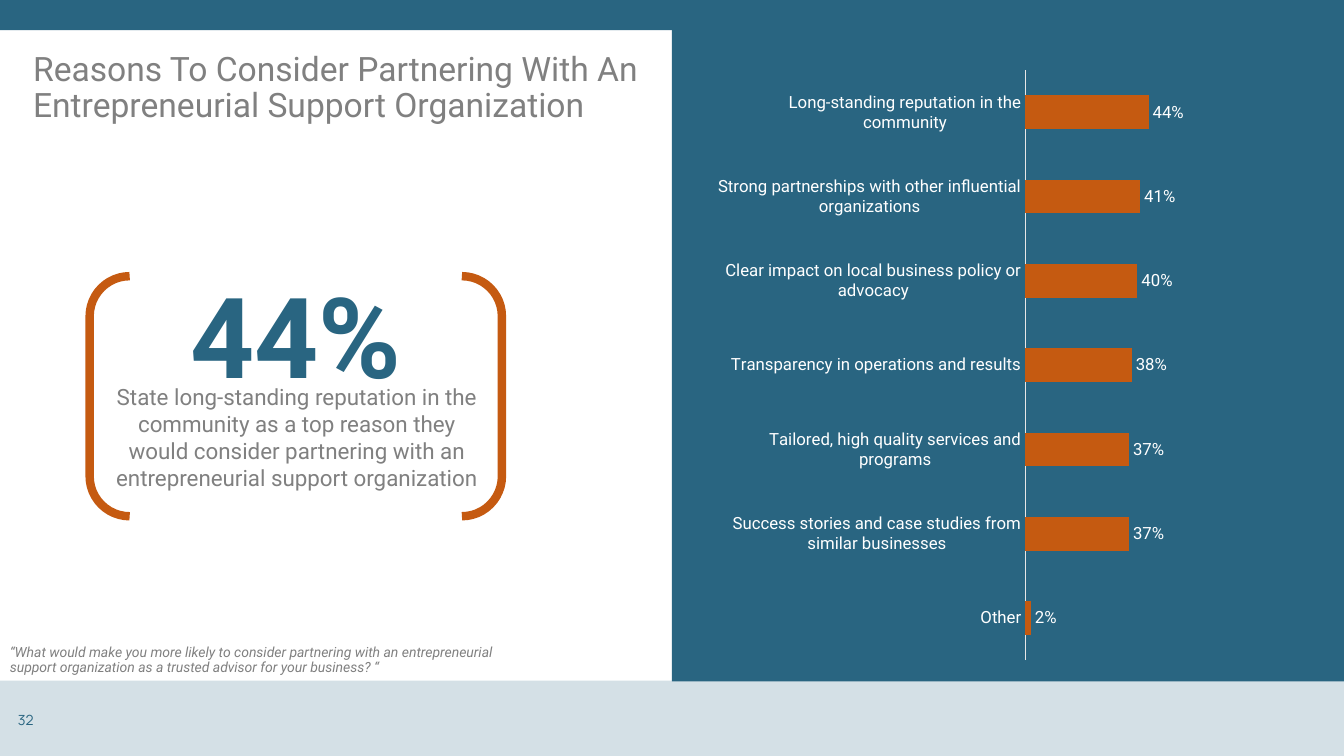
"""Build a slide on reasons to partner with a support organization."""
import pptx
import pptx.chart.data
import pptx.dml.color
import pptx.enum.chart
import pptx.enum.shapes
import pptx.enum.text
import pptx.oxml
import pptx.oxml.ns
import pptx.util

Cm = pptx.util.Cm
Pt = pptx.util.Pt
RGBColor = pptx.dml.color.RGBColor
SHAPE = pptx.enum.shapes.MSO_SHAPE
ALIGN = pptx.enum.text.PP_ALIGN
ANCHOR = pptx.enum.text.MSO_ANCHOR

BLUE = RGBColor(0x29, 0x65, 0x81)
PALE = RGBColor(0xD4, 0xE0, 0xE6)
GREY = RGBColor(0x80, 0x80, 0x80)
RUST = RGBColor(0xC5, 0x5A, 0x11)
WHITE = RGBColor(0xFF, 0xFF, 0xFF)
SILVER = RGBColor(0xE7, 0xE6, 0xE6)

WIDTH, HEIGHT = 33.87, 19.05
HALF = WIDTH / 2
FONT = "Roboto"

REASONS = [
    ("Other", 0.02),
    ("Success stories and case studies from similar businesses", 0.37),
    ("Tailored, high quality services and programs", 0.37),
    ("Transparency in operations and results", 0.38),
    ("Clear impact on local business policy or advocacy", 0.40),
    ("Strong partnerships with other influential organizations", 0.41),
    ("Long-standing reputation in the community", 0.44),
]


def place(box):
    """Turn left, top, width and height in centimetres into lengths."""
    return [Cm(side) for side in box]


def add_panel(slide, box, color):
    """Add a plain filled rectangle."""
    panel = slide.shapes.add_shape(SHAPE.RECTANGLE, *place(box))
    panel.shadow.inherit = False
    panel.fill.solid()
    panel.fill.fore_color.rgb = color
    panel.line.fill.background()


def add_bracket(slide, box):
    """Add the pair of brackets around the key figure."""
    pair = slide.shapes.add_shape(SHAPE.DOUBLE_BRACKET, *place(box))
    pair.shadow.inherit = False
    pair.fill.background()
    pair.line.color.rgb = RUST
    pair.line.width = Pt(6)


def set_text(shape, text, size, color=GREY, name=FONT, bold=False,
             italic=False, align=ALIGN.LEFT, anchor=ANCHOR.TOP, spacing=1.0):
    """Fill a shape with one formatted paragraph."""
    frame = shape.text_frame
    frame.text = text
    frame.word_wrap = True
    frame.auto_size = pptx.enum.text.MSO_AUTO_SIZE.NONE
    frame.vertical_anchor = anchor
    para = frame.paragraphs[0]
    para.alignment = align
    para.line_spacing = spacing
    font = para.runs[0].font
    font.name = name
    font.size = Pt(size)
    font.bold = bold
    font.italic = italic
    font.color.rgb = color


def add_text(slide, box, text, size, **style):
    """Add a text box with one formatted paragraph."""
    set_text(slide.shapes.add_textbox(*place(box)), text, size, **style)


def set_title(slide, box, text):
    """Move the title placeholder and fill it."""
    title = slide.shapes.title
    title.left, title.top, title.width, title.height = place(box)
    set_text(title, text, 24, spacing=0.9)


def set_plot(chart, x, y, w, h):
    """Fix the inner plot area as fractions of the chart."""
    area = chart._chartSpace.chart.plotArea
    for old in area.findall(pptx.oxml.ns.qn("c:layout")):
        area.remove(old)
    sides = "".join(f'<c:{key} val="{val}"/>' for key, val in
                    (("x", x), ("y", y), ("w", w), ("h", h)))
    area.insert(0, pptx.oxml.parse_xml(
        f'<c:layout {pptx.oxml.ns.nsdecls("c")}><c:manualLayout>'
        '<c:layoutTarget val="inner"/><c:xMode val="edge"/>'
        f'<c:yMode val="edge"/>{sides}</c:manualLayout></c:layout>'))


def add_bars(slide, box):
    """Add the bar chart of reasons."""
    data = pptx.chart.data.CategoryChartData(number_format="0%")
    data.categories = [reason for reason, _ in REASONS]
    data.add_series("Series 1", [share for _, share in REASONS])
    kind = pptx.enum.chart.XL_CHART_TYPE.BAR_CLUSTERED
    chart = slide.shapes.add_chart(kind, *place(box), data).chart
    chart.has_legend = False
    chart.has_title = False
    chart.font.name = FONT
    chart.font.size = Pt(12)
    chart.font.color.rgb = WHITE

    cats = chart.category_axis
    cats.major_tick_mark = pptx.enum.chart.XL_TICK_MARK.NONE
    cats.format.line.color.rgb = SILVER
    cats.format.line.width = Pt(0.75)
    scale = chart.value_axis
    scale.visible = False
    scale.has_major_gridlines = False
    scale.minimum_scale = 0
    scale.maximum_scale = 1

    plot = chart.plots[0]
    plot.gap_width = 150
    plot.vary_by_categories = False
    fill = plot.series[0].format.fill
    fill.solid()
    fill.fore_color.rgb = RUST
    plot.has_data_labels = True
    labels = plot.data_labels
    labels.show_value = True
    labels.number_format = "0%"
    labels.number_format_is_linked = False
    labels.position = pptx.enum.chart.XL_LABEL_POSITION.OUTSIDE_END
    set_plot(chart, 0.5, 0.03, 0.44, 0.95)


def main():
    """Build and save the slide."""
    deck = pptx.Presentation()
    deck.slide_width, deck.slide_height = Cm(WIDTH), Cm(HEIGHT)
    slide = deck.slides.add_slide(deck.slide_layouts[5])

    add_panel(slide, (0, 17.15, WIDTH, 1.9), PALE)
    add_panel(slide, (HALF, 0, HALF, 17.17), BLUE)
    add_panel(slide, (0, 0, WIDTH, 0.76), BLUE)
    add_text(slide, (0.2, 17.63, 7.62, 1.02), "32", 10, color=BLUE,
             name="Manrope", anchor=ANCHOR.MIDDLE)
    set_title(slide, (0.58, 1.19, 16.36, 1.63),
              "Reasons To Consider Partnering With An "
              "Entrepreneurial Support Organization")
    add_text(slide, (0, 16.13, 13.61, 1.02),
             "“What would make you more likely to consider partnering with "
             "an entrepreneurial support organization as a trusted advisor "
             "for your business? “", 10, italic=True, spacing=0.9)
    add_bars(slide, (17.81, 1.3, 16.06, 15.65))
    add_bracket(slide, (2.26, 6.96, 10.39, 6.05))
    add_text(slide, (2.26, 6.58, 10.39, 3.68), "44%", 80, color=BLUE,
             bold=True, align=ALIGN.CENTER)
    add_text(slide, (2.54, 9.53, 9.88, 3),
             "State long-standing reputation in the community as a top "
             "reason they would consider partnering with an "
             "entrepreneurial support organization", 16,
             align=ALIGN.CENTER)
    deck.save("out.pptx")


if __name__ == "__main__":
    main()
